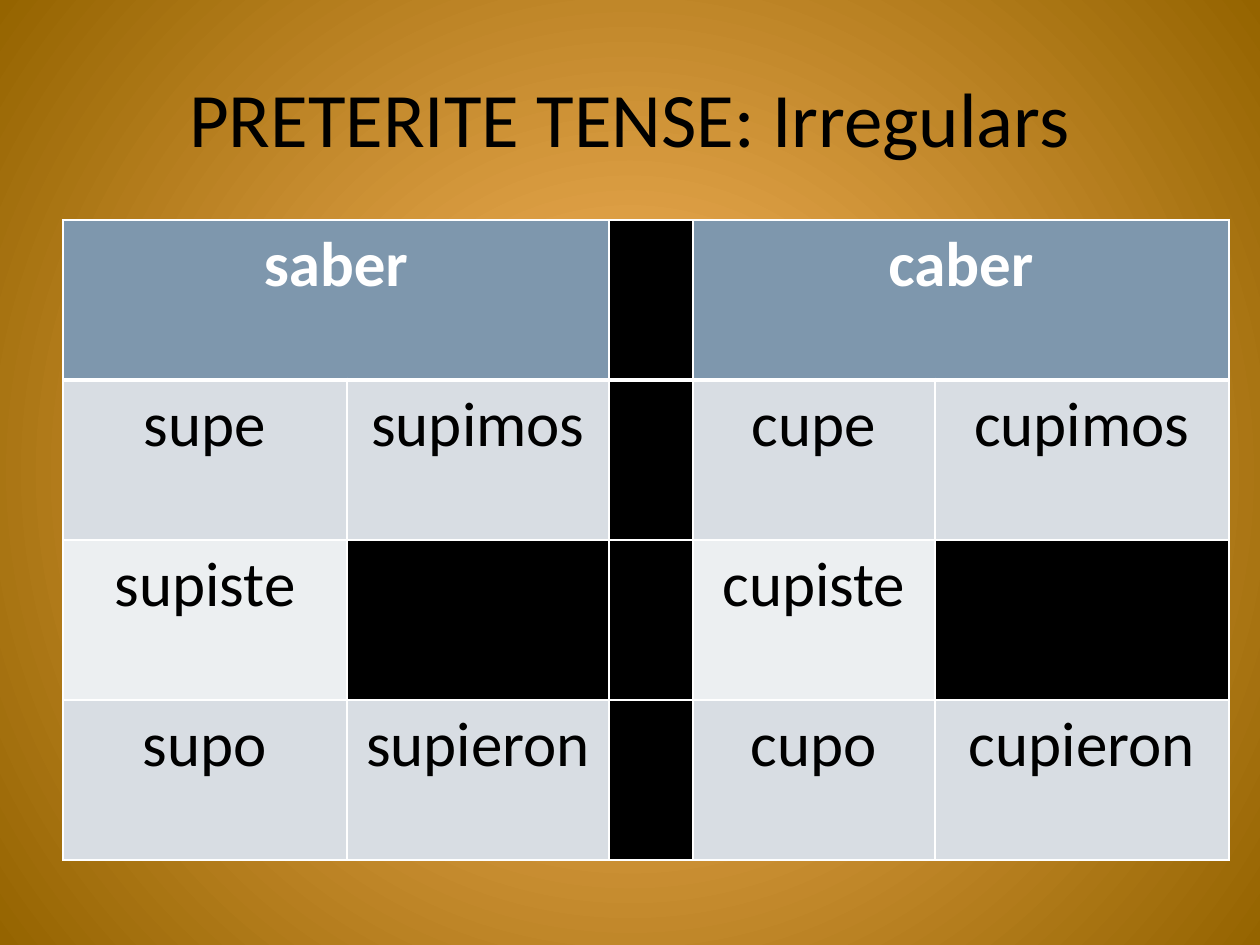
from lxml import etree
from pptx import Presentation
from pptx.dml.color import RGBColor
from pptx.enum.text import MSO_ANCHOR, PP_ALIGN
from pptx.oxml.ns import qn
from pptx.util import Emu, Pt

CENTER = PP_ALIGN.CENTER
MIDDLE = MSO_ANCHOR.MIDDLE
FONT = "Calibri"
BLACK, WHITE = "000000", "FFFFFF"
HEADER_FILL = "7E97AD"
BODY_FILLS = ["D8DDE3", "ECEFF1"]
COL_WIDTHS = [284, 262, 84, 242, 294]
ROW_HEIGHT = 160
VERBS = [
    ["saber", "", "", "caber", ""],
    ["supe", "supimos", "", "cupe", "cupimos"],
    ["supiste", "", "", "cupiste", ""],
    ["supo", "supieron", "", "cupo", "cupieron"],
]


def px(n):
    return Emu(round(n * 914400 / 126))


def rgb(color):
    return RGBColor.from_string(color)


def write(tf, text, size, color, bold=False):
    tf.text = text
    p = tf.paragraphs[0]
    p.alignment = CENTER
    for r in p.runs:
        r.font.name = FONT
        r.font.size = Pt(size)
        r.font.bold = bold
        r.font.color.rgb = rgb(color)


def set_background(s, inner, outer):
    """Fill the slide with a gradient that spreads from its centre."""
    fill = s.background.fill
    fill.gradient()
    for stop, color in zip(fill.gradient_stops, (inner, outer)):
        stop.color.rgb = rgb(color)
    grad = s.element.find(".//" + qn("a:gradFill"))
    lin = grad.find(qn("a:lin"))
    path = etree.Element(qn("a:path"), path="circle")
    etree.SubElement(path, qn("a:fillToRect"),
                     {side: "50000" for side in "ltrb"})
    grad.replace(lin, path)


def add_title(s, text):
    sp = s.shapes.add_textbox(px(63), px(38), px(1134), px(157))
    tf = sp.text_frame
    tf.word_wrap = True
    tf.vertical_anchor = MIDDLE
    write(tf, text, 44, BLACK)


def set_borders(cell, widths):
    """Draw white borders; widths maps L, R, T and B to points."""
    tc_pr = cell._tc.get_or_add_tcPr()
    for side, width in widths.items():
        ln = etree.SubElement(tc_pr, qn(f"a:ln{side}"), w=str(Pt(width)))
        solid = etree.SubElement(ln, qn("a:solidFill"))
        etree.SubElement(solid, qn("a:srgbClr"), val=WHITE)


def style_cell(cell, row, text):
    header = row == 0
    set_borders(cell, {"L": 1, "R": 1, "T": 3 if row == 1 else 1,
                       "B": 3 if header else 1})
    if not text:
        color = BLACK
    elif header:
        color = HEADER_FILL
    else:
        color = BODY_FILLS[(row - 1) % 2]
    cell.fill.solid()
    cell.fill.fore_color.rgb = rgb(color)
    if text:
        write(cell.text_frame, text, 36, WHITE if header else BLACK, header)


def add_verb_table(s):
    frame = s.shapes.add_table(len(VERBS), len(COL_WIDTHS), px(63), px(220),
                               px(sum(COL_WIDTHS)),
                               px(ROW_HEIGHT * len(VERBS)))
    table = frame.table
    for column, width in zip(table.columns, COL_WIDTHS):
        column.width = px(width)
    for row, texts in enumerate(VERBS):
        table.rows[row].height = px(ROW_HEIGHT)
        for col, text in enumerate(texts):
            style_cell(table.cell(row, col), row, text)
    for col in (0, 3):
        table.cell(0, col).merge(table.cell(0, col + 1))


def main():
    prs = Presentation()
    prs.slide_width, prs.slide_height = px(1260), px(945)
    s = prs.slides.add_slide(prs.slide_layouts[6])
    set_background(s, "FFBA65", "956400")
    add_title(s, "PRETERITE TENSE: Irregulars")
    add_verb_table(s)
    prs.save("out.pptx")


if __name__ == "__main__":
    main()
